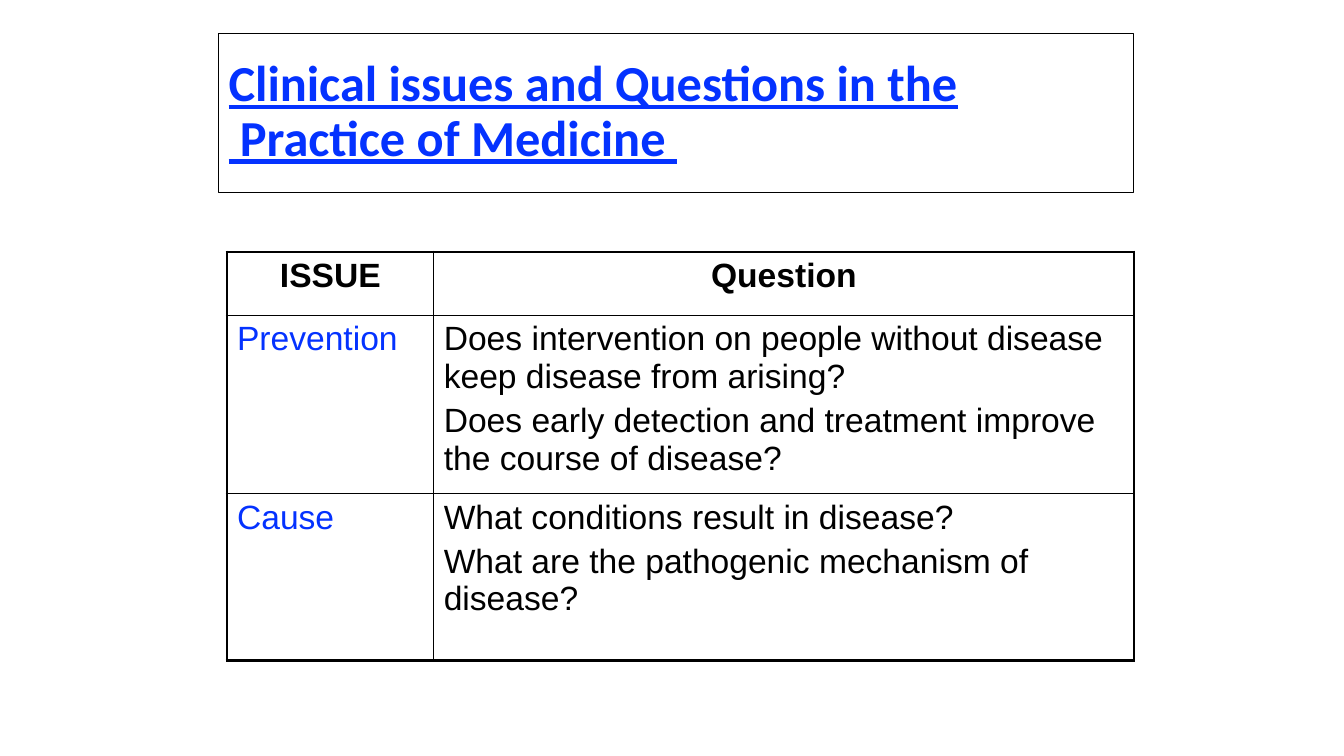
from dataclasses import dataclass

from lxml import etree
from pptx import Presentation
from pptx import util as u
from pptx.dml.color import RGBColor
from pptx.enum import text
from pptx.oxml import ns


@dataclass(frozen=True)
class Theme:
    blue: RGBColor = RGBColor(0x04, 0x32, 0xFF)
    black: RGBColor = RGBColor(0, 0, 0)
    title_font: str = "Calibri"
    body_font: str = "Arial"
    title_size: float = 36
    body_size: float = 24
    title_line: float = 0.75
    outer_line: float = 2.25
    inner_line: float = 1


@dataclass(frozen=True)
class Row:
    height: float
    issue: str
    questions: tuple[str, ...]
    header: bool = False


THEME = Theme()
COLUMNS = (5.21, 17.65)
ROWS = (
    Row(1.6, "ISSUE", ("Question",), header=True),
    Row(4.2, "Prevention", (
        "Does intervention on people without disease keep disease from arising?",
        "Does early detection and treatment improve the course of disease?",
    )),
    Row(4.2, "Cause", (
        "What conditions result in disease?",
        "What are the pathogenic mechanism of disease?",
    )),
)


def write(tf, lines: tuple[str, ...], color: RGBColor, para: dict, font: dict) -> None:
    """Write one paragraph per line with the given formats."""
    for i, line in enumerate(lines):
        p = tf.paragraphs[0] if i == 0 else tf.add_paragraph()
        p.text = line
        for name, value in para.items():
            setattr(p, name, value)
        for r in p.runs:
            r.font.color.rgb = color
            for name, value in font.items():
                setattr(r.font, name, value)


def set_borders(cell, outer: dict[str, bool]) -> None:
    """Draw the four sides, heavier along the table's edge."""
    tc_pr = cell._tc.get_or_add_tcPr()
    for side, is_outer in outer.items():
        width = u.Pt(THEME.outer_line if is_outer else THEME.inner_line)
        ln = etree.SubElement(tc_pr, ns.qn(f"a:ln{side}"), w=str(int(width)))
        fill = etree.SubElement(ln, ns.qn("a:solidFill"))
        etree.SubElement(fill, ns.qn("a:srgbClr"), val=str(THEME.black))


def add_title(s) -> None:
    sp = s.shapes.add_textbox(u.Cm(5.51), u.Cm(0.84), u.Cm(23.06), u.Cm(4.01))
    sp.line.color.rgb = THEME.black
    sp.line.width = u.Pt(THEME.title_line)
    tf = sp.text_frame
    tf.word_wrap = True
    tf.vertical_anchor = text.MSO_ANCHOR.MIDDLE
    write(tf, ("Clinical issues and Questions in the\v Practice of Medicine ",),
          THEME.blue, {"line_spacing": 0.9},
          {"name": THEME.title_font, "size": u.Pt(THEME.title_size),
           "bold": True, "underline": True})


def add_issue_table(s) -> None:
    height = sum(row.height for row in ROWS)
    table = s.shapes.add_table(len(ROWS), len(COLUMNS), u.Cm(5.72), u.Cm(6.35),
                               u.Cm(sum(COLUMNS)), u.Cm(height)).table
    table.first_row = table.horz_banding = False
    for col, width in zip(table.columns, COLUMNS):
        col.width = u.Cm(width)

    for i, row in enumerate(ROWS):
        table.rows[i].height = u.Cm(row.height)
        align = text.PP_ALIGN.CENTER if row.header else text.PP_ALIGN.LEFT
        para = {"alignment": align, "space_before": u.Pt(0.2 * THEME.body_size)}
        font = {"name": THEME.body_font, "size": u.Pt(THEME.body_size),
                "bold": row.header}
        issue_color = THEME.black if row.header else THEME.blue
        contents = (((row.issue,), issue_color), (row.questions, THEME.black))
        for j, (lines, color) in enumerate(contents):
            cell = table.cell(i, j)
            set_borders(cell, {"L": j == 0, "R": j == len(COLUMNS) - 1,
                               "T": i == 0, "B": i == len(ROWS) - 1})
            cell.fill.background()
            write(cell.text_frame, lines, color, para, font)


def main() -> None:
    prs = Presentation()
    prs.slide_width, prs.slide_height = u.Cm(33.87), u.Cm(19.05)
    s = prs.slides.add_slide(prs.slide_layouts[6])
    # Framed heading
    add_title(s)
    # Issues and their questions
    add_issue_table(s)
    prs.save("out.pptx")


if __name__ == "__main__":
    main()
